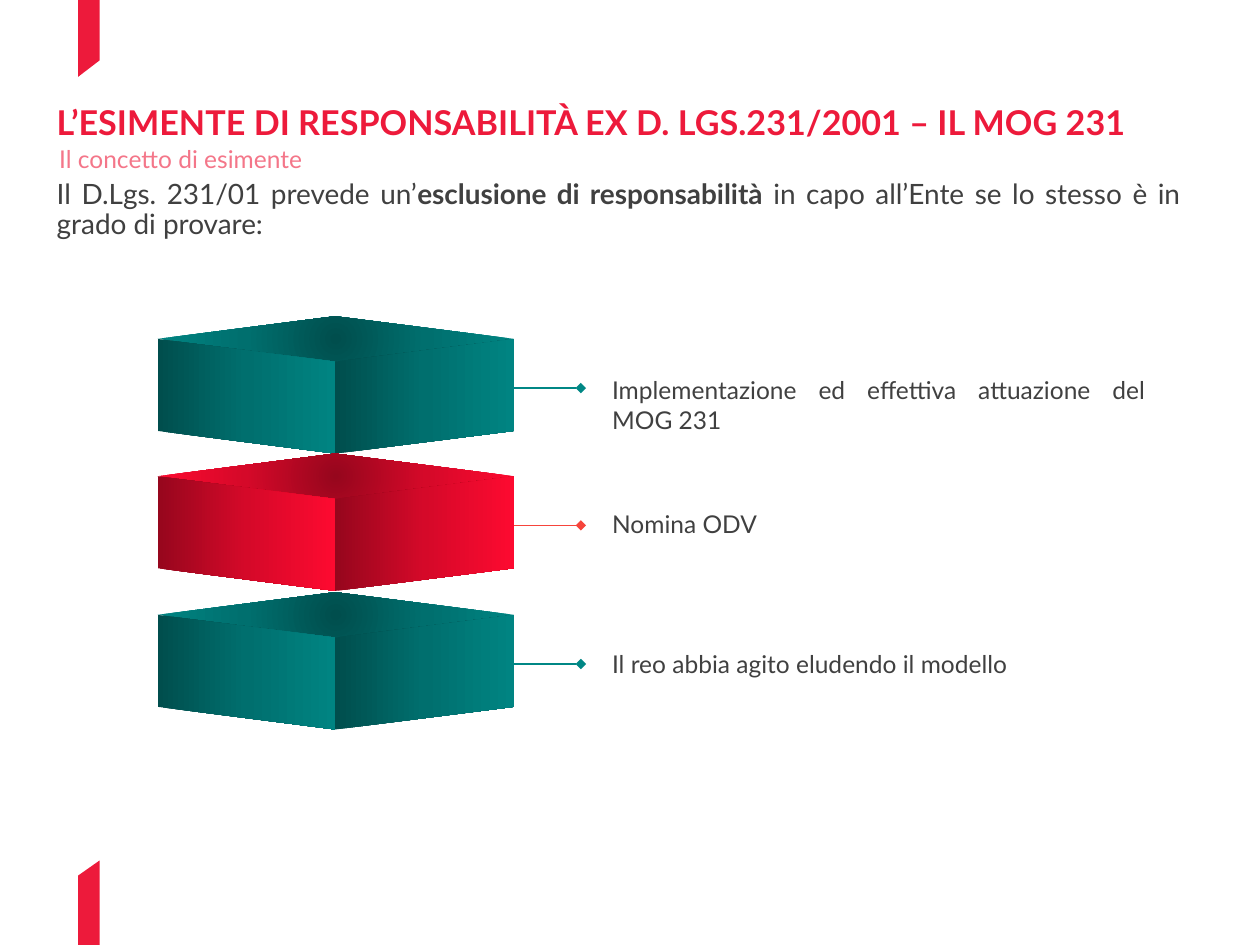
"""Build the slide on the liability exemption with its three stacked blocks."""
from dataclasses import dataclass

from pptx import Presentation
from pptx.dml.color import RGBColor
from pptx.enum.shapes import MSO_CONNECTOR
from pptx.enum.text import MSO_ANCHOR, MSO_AUTO_SIZE, PP_ALIGN
from pptx.oxml import parse_xml
from pptx.oxml.ns import nsdecls, qn
from pptx.oxml.xmlchemy import OxmlElement
from pptx.util import Inches, Pt

RED = RGBColor(0xED, 0x1A, 0x3B)
PINK = RGBColor(0xF4, 0x76, 0x89)
GREY = RGBColor(0x40, 0x40, 0x40)
TEAL = RGBColor(0x00, 0x87, 0x85)
CORAL = RGBColor(0xF6, 0x44, 0x3B)
TEALS = (RGBColor(0x00, 0x4E, 0x4D), RGBColor(0x00, 0x6F, 0x6E), RGBColor(0x00, 0x84, 0x82))
REDS = (RGBColor(0x96, 0x06, 0x1D), RGBColor(0xD5, 0x09, 0x29), RGBColor(0xFD, 0x0A, 0x30))
FONT = "Lato"
LEFT, MID, RIGHT = 1.25, 2.66, 4.08
RISE, WALL = 0.18, 0.73
ROUND = '<a:path path="circle"><a:fillToRect l="50000" t="50000" r="50000" b="50000"/></a:path>'
ACROSS = '<a:lin ang="0" scaled="0"/>'

Point = tuple[float, float]


@dataclass
class Level:
    """One block of the stack with its label."""
    top: float
    tones: tuple[RGBColor, ...]
    line: RGBColor
    text: str
    text_top: float
    text_high: float


LEVELS = [
    Level(2.51, TEALS, TEAL, "Implementazione ed effettiva attuazione del MOG 231", 2.93, 0.57),
    Level(3.6, REDS, CORAL, "Nomina ODV", 3.99, 0.34),
    Level(4.7, TEALS, TEAL, "Il reo abbia agito eludendo il modello", 5.1, 0.34),
]


def place(shape, left: float, top: float, wide: float, high: float) -> None:
    """Move and size a shape."""
    shape.left, shape.top = Inches(left), Inches(top)
    shape.width, shape.height = Inches(wide), Inches(high)


def write(shape, runs: list[tuple[str, bool]], size: float, tint: RGBColor,
          align=PP_ALIGN.LEFT, space: float = 1.0):
    """Write one paragraph, run by run, from the top of a shape."""
    frame = shape.text_frame
    frame.word_wrap = True
    frame.auto_size = MSO_AUTO_SIZE.NONE
    frame.vertical_anchor = MSO_ANCHOR.TOP
    para = frame.paragraphs[0]
    para.alignment, para.line_spacing = align, space
    para.space_before = Pt(0)
    for text, bold in runs:
        run = para.add_run()
        run.text = text
        run.font.name, run.font.size = FONT, Pt(size)
        run.font.bold = bold
        run.font.color.rgb = tint
    return para


def outline(shapes, points: list[Point]):
    """Draw a closed shape without line or shadow."""
    start, *rest = [(Inches(x), Inches(y)) for x, y in points]
    pen = shapes.build_freeform(*start)
    pen.add_line_segments(rest, close=True)
    shape = pen.convert_to_shape()
    shape.shadow.inherit = False
    shape.line.fill.background()
    return shape


def flag(shapes, points: list[Point]) -> None:
    """Draw a red flag on the page edge."""
    shape = outline(shapes, points)
    shape.fill.solid()
    shape.fill.fore_color.rgb = RED


def face(shapes, points: list[Point], tones: tuple[RGBColor, ...], path: str) -> None:
    """Draw one shaded face of a block."""
    shape = outline(shapes, points)
    shape.fill.background()
    stops = "".join(f'<a:gs pos="{i * 50000}"><a:srgbClr val="{tone}"/></a:gs>'
                    for i, tone in enumerate(tones))
    grad = parse_xml(f'<a:gradFill {nsdecls("a")} rotWithShape="1">'
                     f'<a:gsLst>{stops}</a:gsLst>{path}</a:gradFill>')
    props = shape.element.spPr
    props.replace(props.find(qn("a:noFill")), grad)


def block(shapes, level: Level) -> None:
    """Draw a block from its lid and two walls."""
    group = shapes.add_group_shape().shapes
    edge = level.top + RISE
    front = edge + RISE
    lid = [(MID, level.top), (LEFT, edge), (MID, front), (RIGHT, edge)]
    face(group, lid, level.tones, ROUND)
    for side in (LEFT, RIGHT):
        wall = [(MID, front + WALL), (side, edge + WALL), (side, edge), (MID, front)]
        face(group, wall, level.tones, ACROSS)


def leader(shapes, level: Level) -> None:
    """Draw the line from a block to its label."""
    y = Inches(level.top + 0.57)
    line = shapes.add_connector(MSO_CONNECTOR.STRAIGHT, Inches(4.03), y, Inches(4.61), y)
    line.line.color.rgb = level.line
    line.line.width = Pt(0.75)
    tail = OxmlElement("a:tailEnd")
    tail.set("type", "diamond")
    line.line._get_or_add_ln().append(tail)
    line.element.spPr.append(OxmlElement("a:effectLst"))


def label(shapes, level: Level) -> None:
    """Write the text beside a block."""
    box = shapes.add_textbox(Inches(4.76), Inches(level.text_top),
                             Inches(4.43), Inches(level.text_high))
    write(box, [(level.text, False)], 14, GREY, PP_ALIGN.JUSTIFY)


def main() -> None:
    """Build and save the slide."""
    deck = Presentation()
    deck.slide_width, deck.slide_height = Inches(10), Inches(7.5)
    slide = deck.slides.add_slide(deck.slide_layouts[1])
    shapes = slide.shapes

    flag(shapes, [(0.62, 6.95), (0.62, 7.5), (0.79, 7.5), (0.79, 6.83)])
    flag(shapes, [(0.79, 0.48), (0.79, 0), (0.62, 0), (0.62, 0.61)])

    title = shapes.title
    place(title, 0.35, 0.82, 9.26, 0.26)
    write(title, [("L’ESIMENTE DI RESPONSABILITÀ EX D. LGS.231/2001 – IL MOG 231", True)],
          19.5, RED, space=0.8)

    sub = shapes.add_textbox(Inches(0.47), Inches(1.14), Inches(7.2), Inches(0.24))
    frame = sub.text_frame
    frame.margin_left = frame.margin_right = frame.margin_top = frame.margin_bottom = 0
    write(sub, [("Il concetto di esimente", False)], 14, PINK)

    body = slide.placeholders[1]
    place(body, 0.35, 1.38, 9.12, 0.59)
    para = write(body, [("Il D.Lgs. 231/01 prevede un’", False),
                        ("esclusione di responsabilità ", True),
                        ("in capo all’Ente se lo stesso è in grado di provare:", False)],
                 16, GREY, PP_ALIGN.JUSTIFY, 0.9)
    props = para._p.get_or_add_pPr()
    props.set("marL", "0")
    props.set("indent", "0")
    props.append(OxmlElement("a:buNone"))

    for level in LEVELS:
        leader(shapes, level)
        block(shapes, level)
        label(shapes, level)

    deck.save("out.pptx")


if __name__ == "__main__":
    main()
